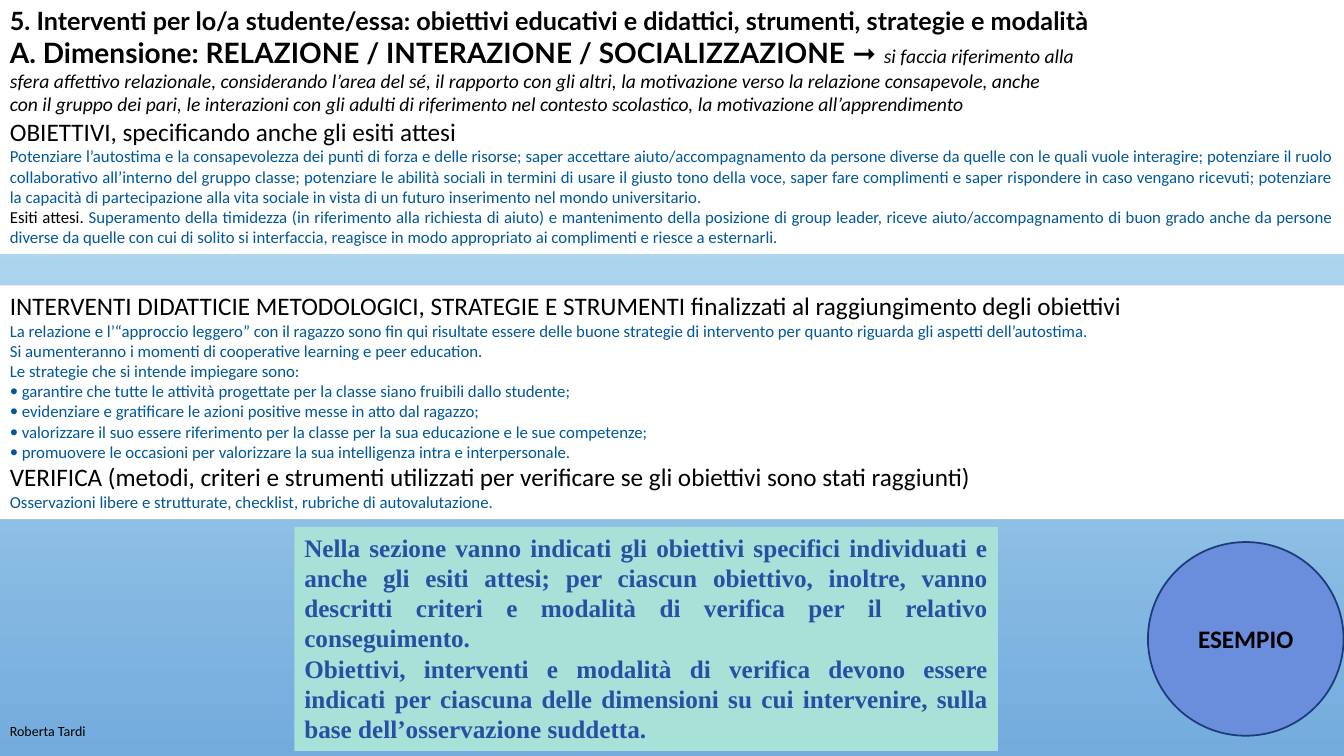
from lxml import etree
from pptx import Presentation
from pptx.dml.color import RGBColor
from pptx.enum.shapes import MSO_SHAPE
from pptx.enum.text import MSO_ANCHOR, MSO_AUTO_SIZE, PP_ALIGN
from pptx.oxml.ns import qn
from pptx.util import Cm, Pt

RECTANGLE, OVAL = MSO_SHAPE.RECTANGLE, MSO_SHAPE.OVAL
TOP, MIDDLE = MSO_ANCHOR.TOP, MSO_ANCHOR.MIDDLE
LEFT, CENTER, JUSTIFY = PP_ALIGN.LEFT, PP_ALIGN.CENTER, PP_ALIGN.JUSTIFY
FIT_SHAPE = MSO_AUTO_SIZE.SHAPE_TO_FIT_TEXT

BLACK = RGBColor(0x00, 0x00, 0x00)
WHITE = RGBColor(0xFF, 0xFF, 0xFF)
ANSWER_BLUE = RGBColor(0x00, 0x57, 0x9B)
NOTE_BLUE = RGBColor(0x27, 0x4F, 0xA4)
MINT = RGBColor(0xA7, 0xE1, 0xD7)
BADGE_FILL = RGBColor(0x6A, 0x8E, 0xDC)
BADGE_LINE = RGBColor(0x1D, 0x3A, 0x79)
SKY_TOP = RGBColor(0xCB, 0xEC, 0xF5)
SKY_BOTTOM = RGBColor(0x73, 0xAB, 0xDD)

# Run styles: font, size, colour, bold, italic
TITLE = ("Lato", 18, BLACK, True, False)
DIMENSION = ("Lato", 20, BLACK, True, False)
ARROW = ("Arial", 20, BLACK, False, False)
HINT = ("Calibri", 14, BLACK, False, True)
HEADING = ("Calibri", 18, BLACK, False, False)
LABEL = ("Calibri", 12, BLACK, False, False)
ANSWER = ("Calibri", 12, ANSWER_BLUE, False, False)
NOTE = ("Times New Roman", 18, NOTE_BLUE, True, False)
BADGE = ("Calibri", 18, BLACK, True, False)
AUTHOR = ("Calibri", 10, BLACK, False, False)


def write(frame, paragraphs, anchor=TOP):
    """Each paragraph is (alignment, bulleted, [(text, style), ...])."""
    frame.word_wrap = True
    frame.vertical_anchor = anchor
    for index, (alignment, bulleted, runs) in enumerate(paragraphs):
        paragraph = frame.add_paragraph() if index else frame.paragraphs[0]
        paragraph.alignment = alignment
        if bulleted:
            properties = paragraph._p.get_or_add_pPr()
            properties.set("marL", str(Cm(0.3)))
            properties.set("indent", str(-Cm(0.3)))
            etree.SubElement(properties, qn("a:buFont")).set("typeface", "Calibri")
            etree.SubElement(properties, qn("a:buChar")).set("char", "•")
        for text, (font, size, color, bold, italic) in runs:
            run = paragraph.add_run()
            run.text = text
            run.font.name, run.font.size = font, Pt(size)
            run.font.bold, run.font.italic = bold, italic
            run.font.color.rgb = color


def add_panel(kind, left, top, width, height, fill):
    panel = slide.shapes.add_shape(kind, Cm(left), Cm(top), Cm(width), Cm(height))
    panel.shadow.inherit = False
    panel.fill.solid()
    panel.fill.fore_color.rgb = fill
    panel.line.fill.background()
    return panel


prs = Presentation()
prs.slide_width, prs.slide_height = Cm(33.87), Cm(19.05)
slide = prs.slides.add_slide(prs.slide_layouts[6])

# Background, light at the top
sky = slide.background.fill
sky.gradient()
sky.gradient_angle = 270
for stop, color in zip(sky.gradient_stops, (SKY_TOP, SKY_BOTTOM)):
    stop.color.rgb = color

# Objectives
objectives = add_panel(RECTANGLE, 0, 0, 33.87, 6.4, WHITE)
write(objectives.text_frame, [
    (LEFT, False, [("5. Interventi per lo/a studente/essa: obiettivi educativi e didattici, "
                    "strumenti, strategie e modalità", TITLE)]),
    (JUSTIFY, False, [
        ("A. Dimensione: RELAZIONE / INTERAZIONE / SOCIALIZZAZIONE ", DIMENSION),
        ("➞ ", ARROW),
        ("si faccia riferimento alla", HINT)]),
    (JUSTIFY, False, [("sfera affettivo relazionale, considerando l’area del sé, il rapporto con gli "
                       "altri, la motivazione verso la relazione consapevole, anche", HINT)]),
    (JUSTIFY, False, [("con il gruppo dei pari, le interazioni con gli adulti di riferimento nel "
                       "contesto scolastico, la motivazione all’apprendimento", HINT)]),
    (LEFT, False, [("OBIETTIVI, specificando anche gli esiti attesi", HEADING)]),
    (JUSTIFY, False, [(
        "Potenziare l’autostima e la consapevolezza dei punti di forza e delle risorse; saper "
        "accettare aiuto/accompagnamento da persone diverse da quelle con le quali vuole "
        "interagire; potenziare il ruolo collaborativo all’interno del gruppo classe; potenziare "
        "le abilità sociali in termini di usare il giusto tono della voce, saper fare complimenti "
        "e saper rispondere in caso vengano ricevuti; potenziare la capacità di partecipazione "
        "alla vita sociale in vista di un futuro inserimento nel mondo universitario.", ANSWER)]),
    (JUSTIFY, False, [
        ("Esiti attesi. ", LABEL),
        ("Superamento della timidezza (in riferimento alla richiesta di aiuto) e mantenimento "
         "della posizione di group leader, riceve aiuto/accompagnamento di buon grado anche da "
         "persone diverse da quelle con cui di solito si interfaccia, reagisce in modo "
         "appropriato ai complimenti e riesce a esternarli.", ANSWER)]),
])
objectives.text_frame.auto_size = FIT_SHAPE

# Example badge
badge = add_panel(OVAL, 28.93, 13.66, 4.93, 4.88, BADGE_FILL)
badge.line.color.rgb = BADGE_LINE
badge.line.width = Pt(1.25)
write(badge.text_frame, [(CENTER, False, [("ESEMPIO", BADGE)])], MIDDLE)

# Teaching strategies and assessment
introduction = [
    "La relazione e l’“approccio leggero” con il ragazzo sono fin qui risultate essere delle "
    "buone strategie di intervento per quanto riguarda gli aspetti dell’autostima.",
    "Si aumenteranno i momenti di cooperative learning e peer education.",
    "Le strategie che si intende impiegare sono:",
]
strategies = [
    "garantire che tutte le attività progettate per la classe siano fruibili dallo studente;",
    "evidenziare e gratificare le azioni positive messe in atto dal ragazzo;",
    "valorizzare il suo essere riferimento per la classe per la sua educazione e le sue competenze;",
    "promuovere le occasioni per valorizzare la sua intelligenza intra e interpersonale.",
]
interventions = add_panel(RECTANGLE, 0, 7.19, 33.87, 5.89, WHITE)
write(interventions.text_frame, [
    (LEFT, False, [("INTERVENTI DIDATTICIE METODOLOGICI, STRATEGIE E STRUMENTI finalizzati al "
                    "raggiungimento degli obiettivi", HEADING)]),
    *[(LEFT, False, [(text, ANSWER)]) for text in introduction],
    *[(LEFT, True, [(text, ANSWER)]) for text in strategies],
    (LEFT, False, [("VERIFICA (metodi, criteri e strumenti utilizzati per verificare se gli "
                    "obiettivi sono stati raggiunti)", HEADING)]),
    (LEFT, False, [("Osservazioni libere e strutturate, checklist, rubriche di "
                    "autovalutazione.", ANSWER)]),
])
interventions.text_frame.auto_size = FIT_SHAPE

# Guidance note
guidance = add_panel(RECTANGLE, 7.42, 13.28, 17.73, 5.64, MINT)
write(guidance.text_frame, [
    (JUSTIFY, False, [(
        "Nella sezione vanno indicati gli obiettivi specifici individuati e anche gli esiti "
        "attesi; per ciascun obiettivo, inoltre, vanno descritti criteri e modalità di "
        "verifica per il relativo conseguimento.", NOTE)]),
    (JUSTIFY, False, [(
        "Obiettivi, interventi e modalità di verifica devono essere indicati per ciascuna delle "
        "dimensioni su cui intervenire, sulla base dell’osservazione suddetta.", NOTE)]),
])
guidance.text_frame.auto_size = FIT_SHAPE

# Author
author = slide.shapes.add_textbox(Cm(0), Cm(17.91), Cm(2.84), Cm(1.02))
write(author.text_frame, [(LEFT, False, [("Roberta Tardi", AUTHOR)])], MIDDLE)

prs.save("out.pptx")
